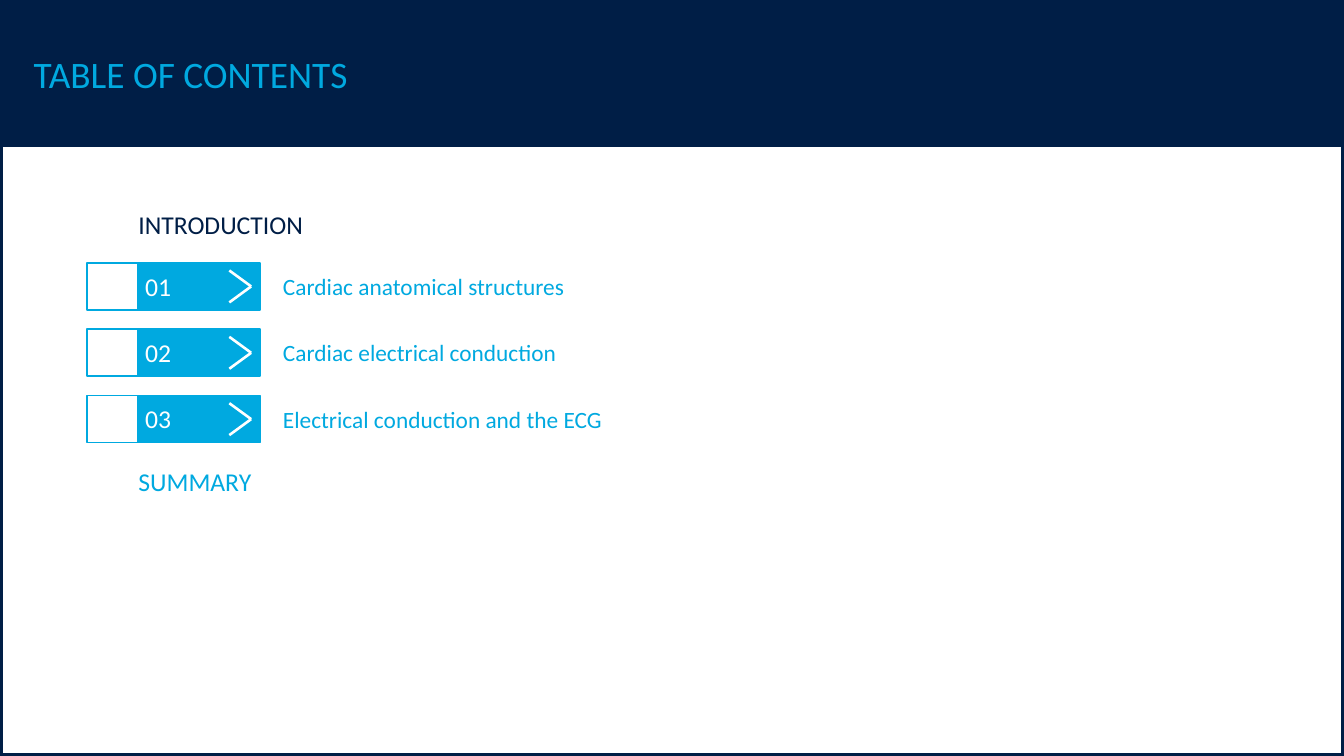
from dataclasses import dataclass

from lxml.etree import SubElement
from pptx import Presentation
from pptx.dml.color import RGBColor as Rgb
from pptx.enum.shapes import MSO_CONNECTOR as Conn, MSO_SHAPE as Geo
from pptx.enum.text import MSO_ANCHOR as Anchor, MSO_AUTO_SIZE as Auto, PP_ALIGN as Align
from pptx.oxml.ns import qn
from pptx.util import Inches, Pt


@dataclass(frozen=True)
class Theme:
    """Colours, font and type sizes of the deck."""
    navy: str = "001E46"
    cyan: str = "00A9E0"
    white: str = "FFFFFF"
    font: str = "Calibri"
    title: int = 32
    head: int = 22
    item: int = 20


THEME = Theme()
WIDE, HIGH = 16, 9
TOPICS = [
    "Cardiac anatomical structures",
    "Cardiac electrical conduction",
    "Electrical conduction and the ECG",
]


def write(frame, text, size=THEME.head, color=THEME.cyan, wrap=True, anchor=Anchor.TOP, left=0.1):
    """Put one formatted paragraph into a text frame."""
    frame.word_wrap = wrap
    frame.vertical_anchor = anchor
    frame.margin_left = Inches(left)
    para = frame.paragraphs[0]
    para.alignment = Align.LEFT
    run = para.add_run()
    run.text = text
    run.font.name = THEME.font
    run.font.size = Pt(size)
    run.font.color.rgb = Rgb.from_string(color)


def label(shapes, box, text, **style):
    """Add a text box that grows with its text."""
    frame = shapes.add_textbox(*map(Inches, box)).text_frame
    write(frame, text, **style)
    frame.auto_size = Auto.SHAPE_TO_FIT_TEXT


def block(shapes, box, fill=None, line=None, width=1.5):
    """Add a plain rectangle."""
    rect = shapes.add_shape(Geo.RECTANGLE, *map(Inches, box))
    rect.shadow.inherit = False
    if fill:
        rect.fill.solid()
        rect.fill.fore_color.rgb = Rgb.from_string(fill)
    else:
        rect.fill.background()
    if line:
        rect.line.color.rgb = Rgb.from_string(line)
        rect.line.width = Pt(width)
    else:
        rect.line.fill.background()
    return rect


def stroke(shapes, start, end):
    """Add a white straight line."""
    line = shapes.add_connector(Conn.STRAIGHT, *map(Inches, (*start, *end)))
    line.line.color.rgb = Rgb.from_string(THEME.white)
    line.line.width = Pt(2.25)
    SubElement(line._element.spPr, qn("a:effectLst"))


def banner(shapes, box, text):
    """Add the title band."""
    band = block(shapes, box, fill=THEME.navy)
    write(band.text_frame, text, size=THEME.title, anchor=Anchor.MIDDLE, left=0.4)


def badge(shapes, box):
    """Add an empty tick box beside a bar with a chevron."""
    left, top, width, height = box
    tick = 0.6
    group = shapes.add_group_shape().shapes
    block(group, (left + tick, top, width - tick, height), THEME.cyan, THEME.cyan)
    block(group, (left, top, tick, height), line=THEME.cyan)
    tip = left + width - 0.11, top + height / 2
    for rise in (-0.19, 0.19):
        stroke(group, (tip[0] - 0.26, tip[1] + rise), tip)


def topic(shapes, box, number, text):
    """Add one numbered row of the contents."""
    left, top, width, height = box
    badge(shapes, (left, top, 2.06, height))
    label(shapes, (left + 0.59, top + 0.04, 0.54, 0.47), f"{number:02}",
          color=THEME.white, wrap=False)
    label(shapes, (left + 2.23, top + 0.06, width - 2.23, 0.44), text,
          size=THEME.item, wrap=False)


def contents(shapes, box):
    """Add the list of topics between its two headings."""
    left, top, width, height = box
    label(shapes, (left + 0.51, top, 2.76, 0.47), "INTRODUCTION", color=THEME.navy)
    for row, text in enumerate(TOPICS):
        topic(shapes, (left, top + 0.69 + 0.79 * row, width, 0.56), row + 1, text)
    label(shapes, (left + 0.51, top + height - 0.47, 2.76, 0.47), "SUMMARY")


def main():
    """Build and save the slide."""
    deck = Presentation()
    deck.slide_width, deck.slide_height = Inches(WIDE), Inches(HIGH)
    shapes = deck.slides.add_slide(deck.slide_layouts[6]).shapes
    block(shapes, (0, 0, WIDE, HIGH), line=THEME.navy, width=5.25)
    banner(shapes, (0, 0, WIDE, 1.75), "TABLE OF CONTENTS")
    contents(shapes, (1.04, 2.44, 6.54, 3.53))
    deck.save("out.pptx")


if __name__ == "__main__":
    main()
